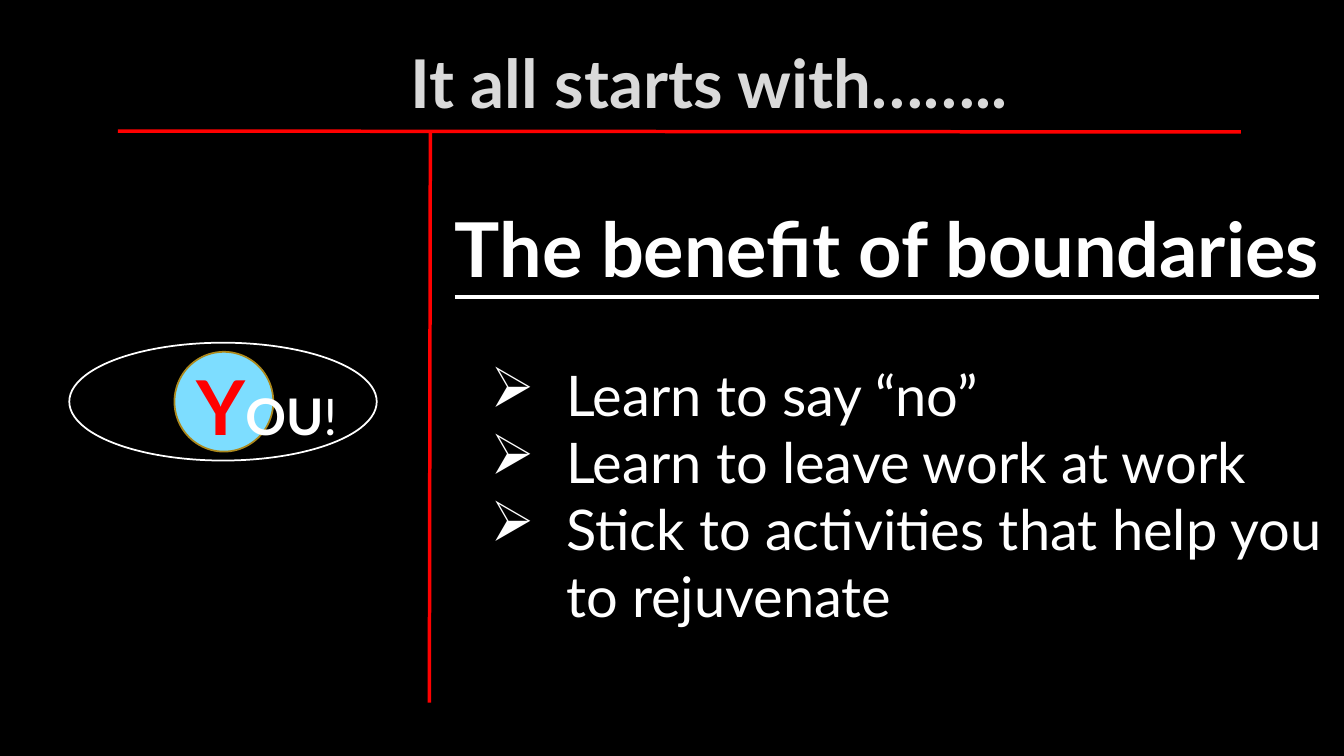
from dataclasses import dataclass

from lxml.etree import SubElement
from pptx import Presentation
from pptx.dml.color import RGBColor
from pptx.enum.shapes import MSO_CONNECTOR, MSO_SHAPE
from pptx.enum.text import MSO_ANCHOR, PP_ALIGN
from pptx.oxml.ns import qn
from pptx.util import Pt


@dataclass(frozen=True)
class Theme:
    font: str = "Lato"
    background: RGBColor = RGBColor(0x00, 0x00, 0x00)
    text: RGBColor = RGBColor(0xFF, 0xFF, 0xFF)
    title: RGBColor = RGBColor(0xDA, 0xDA, 0xDA)
    accent: RGBColor = RGBColor(0xFF, 0x00, 0x00)
    disc: RGBColor = RGBColor(0x7D, 0xDD, 0xFF)
    disc_edge: RGBColor = RGBColor(0xAC, 0x88, 0x1C)
    title_size: int = 48
    heading_size: int = 54
    bullet_size: int = 40
    initial_size: int = 54
    word_size: int = 36


THEME = Theme()
BENEFITS = [
    "Learn to say “no”",
    "Learn to leave work at work",
    "Stick to activities that help you to rejuvenate",
]


def set_font(font, size, color, bold=False):
    font.name = THEME.font
    font.size = Pt(size)
    font.color.rgb = color
    font.bold = bold


def add_title(slide, text):
    title = slide.shapes.title
    title.left, title.top, title.width, title.height = Pt(220), Pt(23), Pt(573), Pt(71)
    title.text_frame.vertical_anchor = MSO_ANCHOR.MIDDLE
    paragraph = title.text_frame.paragraphs[0]
    paragraph.text = text
    paragraph.alignment = PP_ALIGN.CENTER
    set_font(paragraph.font, THEME.title_size, THEME.title, bold=True)


def add_rule(slide, x1, y1, x2, y2):
    rule = slide.shapes.add_connector(MSO_CONNECTOR.STRAIGHT, Pt(x1), Pt(y1), Pt(x2), Pt(y2))
    rule.line.color.rgb = THEME.accent
    rule.line.width = Pt(2.5)
    SubElement(rule._element.spPr, qn("a:effectLst"))


def add_round(shapes, preset, left, top, width, height, fill, edge):
    round_shape = shapes.add_shape(preset, Pt(left), Pt(top), Pt(width), Pt(height))
    round_shape.shadow.inherit = False
    round_shape.fill.solid()
    round_shape.fill.fore_color.rgb = fill
    round_shape.line.color.rgb = edge
    round_shape.line.width = Pt(1.25)


def add_you_badge(slide):
    badge = slide.shapes.add_group_shape().shapes
    add_round(badge, MSO_SHAPE.OVAL, 49.5, 244.8, 219.6, 84.2, THEME.background, THEME.text)
    add_round(badge, MSO_SHAPE.FLOWCHART_CONNECTOR, 124.6, 251.3, 70.6, 71.3,
              THEME.disc, THEME.disc_edge)
    word = badge.add_textbox(Pt(133.2), Pt(253.4), Pt(123.8), Pt(72.7)).text_frame
    word.word_wrap = False
    for text, size, color, bold in [
        ("Y", THEME.initial_size, THEME.accent, True),
        ("OU", THEME.word_size, THEME.text, True),
        ("!", THEME.word_size, THEME.text, False),
    ]:
        run = word.paragraphs[0].add_run()
        run.text = text
        set_font(run.font, size, color, bold)


def make_bullet(paragraph, mark, indent, hanging):
    properties = paragraph._p.get_or_add_pPr()
    properties.set("marL", str(Pt(indent)))
    properties.set("indent", str(-Pt(hanging)))
    SubElement(properties, qn("a:buChar")).set("char", mark)


def add_benefits(slide, heading_text, benefits):
    frame = slide.shapes.add_textbox(Pt(307.4), Pt(141), Pt(652.4), Pt(315.4)).text_frame
    frame.word_wrap = True
    heading = frame.paragraphs[0]
    heading.text = heading_text
    heading.alignment = PP_ALIGN.CENTER
    set_font(heading.font, THEME.heading_size, THEME.text, bold=True)
    heading.font.underline = True
    for index, benefit in enumerate(benefits):
        paragraph = frame.add_paragraph()
        paragraph.text = benefit
        paragraph.level = 1
        if index == 0:
            paragraph.space_before = Pt(48)
        make_bullet(paragraph, "➢", indent=90, hanging=54)
        set_font(paragraph.font, THEME.bullet_size, THEME.text)


def main():
    presentation = Presentation()
    presentation.slide_width, presentation.slide_height = Pt(960), Pt(540)
    slide = presentation.slides.add_slide(presentation.slide_layouts.get_by_name("Title Only"))
    slide.background.fill.solid()
    slide.background.fill.fore_color.rgb = THEME.background

    add_title(slide, "It all starts with……..")
    add_rule(slide, 84.2, 93.6, 886.3, 94.3)
    add_you_badge(slide)
    add_benefits(slide, "The benefit of boundaries", BENEFITS)
    add_rule(slide, 307.4, 93.6, 306.7, 501.8)
    presentation.save("out.pptx")


if __name__ == "__main__":
    main()
